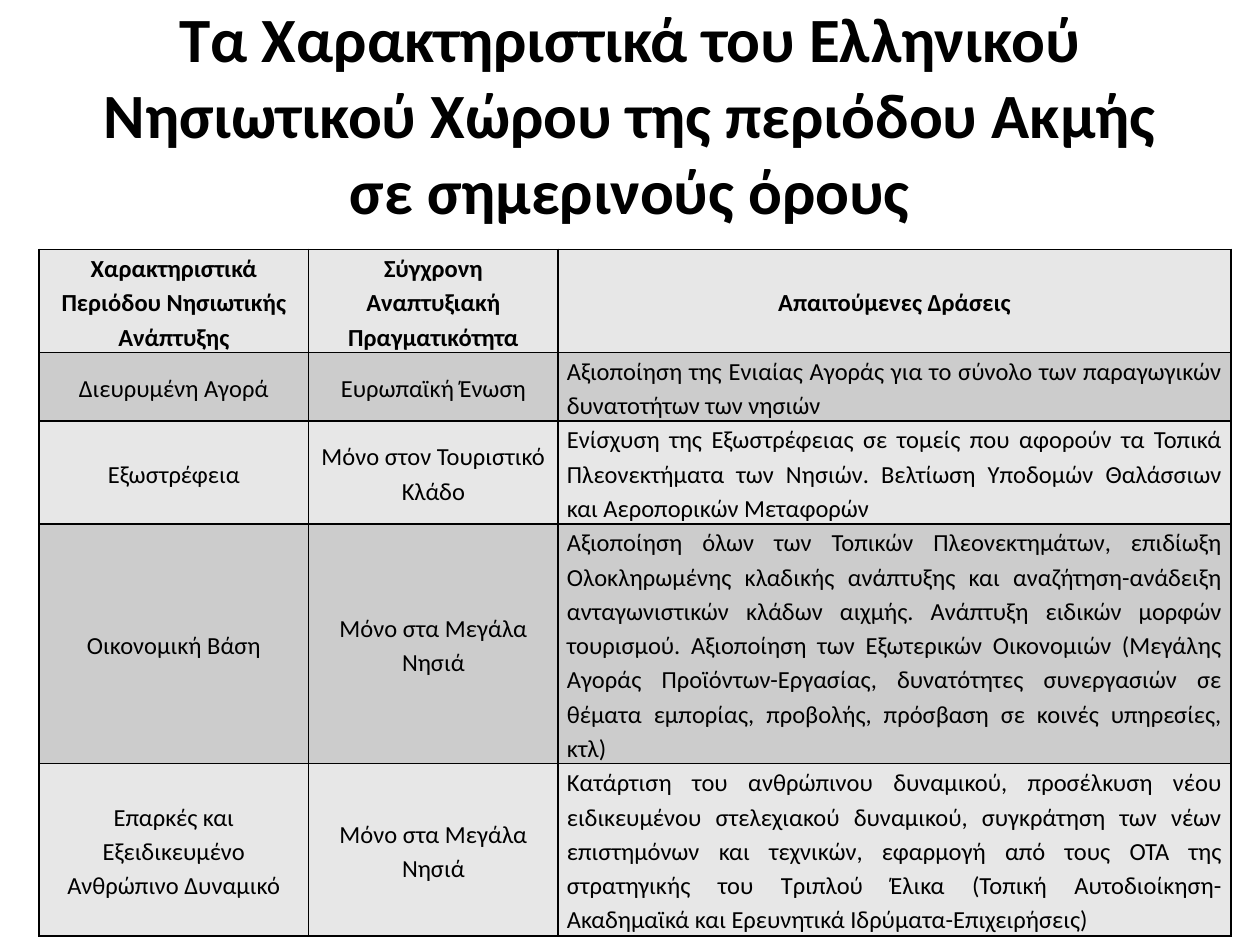
from dataclasses import dataclass

from lxml.etree import SubElement
from pptx import Presentation
from pptx.dml.color import RGBColor
from pptx.enum.text import MSO_ANCHOR as Anchor, PP_ALIGN as Align
from pptx.oxml.ns import qn
from pptx.util import Inches, Pt


@dataclass(frozen=True)
class Theme:
    font: str = "Calibri"
    ink: str = "000000"
    bands: tuple = ("E7E7E7", "CCCCCC")
    title_size: int = 36
    body_size: int = 14
    border_width: int = 1
    cell_spacing: float = 1.15


TITLE = "Τα Χαρακτηριστικά του Ελληνικού Νησιωτικού Χώρου της περιόδου Ακμής σε σημερινούς όρους"
COLUMN_WIDTHS = (2.14, 1.98, 5.34)
ROW_HEIGHTS = (0.82, 0.54, 0.82, 1.9, 1.37)
ROWS = (
    ("Χαρακτηριστικά Περιόδου Νησιωτικής Ανάπτυξης",
     "Σύγχρονη Αναπτυξιακή Πραγματικότητα",
     "Απαιτούμενες Δράσεις"),
    ("Διευρυμένη Αγορά",
     "Ευρωπαϊκή Ένωση",
     "Αξιοποίηση της Ενιαίας Αγοράς για το σύνολο των παραγωγικών δυνατοτήτων των νησιών"),
    ("Εξωστρέφεια",
     "Μόνο στον Τουριστικό Κλάδο",
     "Ενίσχυση της Εξωστρέφειας σε τομείς που αφορούν τα Τοπικά Πλεονεκτήματα των Νησιών. "
     "Βελτίωση Υποδομών Θαλάσσιων και Αεροπορικών Μεταφορών"),
    ("Οικονομική Βάση",
     "Μόνο στα Μεγάλα Νησιά",
     "Αξιοποίηση όλων των Τοπικών Πλεονεκτημάτων, επιδίωξη Ολοκληρωμένης κλαδικής ανάπτυξης "
     "και αναζήτηση-ανάδειξη ανταγωνιστικών κλάδων αιχμής. Ανάπτυξη ειδικών μορφών τουρισμού. "
     "Αξιοποίηση των Εξωτερικών Οικονομιών (Μεγάλης Αγοράς Προϊόντων-Εργασίας, δυνατότητες "
     "συνεργασιών σε θέματα εμπορίας, προβολής, πρόσβαση σε κοινές υπηρεσίες, κτλ)"),
    ("Επαρκές και Εξειδικευμένο Ανθρώπινο Δυναμικό",
     "Μόνο στα Μεγάλα Νησιά",
     "Κατάρτιση του ανθρώπινου δυναμικού, προσέλκυση νέου ειδικευμένου στελεχιακού δυναμικού, "
     "συγκράτηση των νέων επιστημόνων και τεχνικών, εφαρμογή από τους ΟΤΑ της στρατηγικής του "
     "Τριπλού Έλικα (Τοπική Αυτοδιοίκηση-Ακαδημαϊκά και Ερευνητικά Ιδρύματα-Επιχειρήσεις)"),
)


def write_text(frame, text, *, theme, size, bold=False, align=Align.CENTER, spacing=None):
    para = frame.paragraphs[0]
    para.alignment = align
    para.line_spacing = spacing
    span = para.add_run()
    span.text = text
    span.font.name = theme.font
    span.font.size = Pt(size)
    span.font.bold = bold
    span.font.color.rgb = RGBColor.from_string(theme.ink)


class SlideBuilder:
    def __init__(self, page, theme):
        self.page = page
        self.theme = theme

    def title(self, text, left, top, width, height):
        box = self.page.shapes.add_textbox(
            Inches(left), Inches(top), Inches(width), Inches(height))
        frame = box.text_frame
        frame.word_wrap = True
        frame.vertical_anchor = Anchor.MIDDLE
        write_text(frame, text, theme=self.theme, size=self.theme.title_size, bold=True)

    def table(self, rows, left, top, widths, heights):
        table = self.page.shapes.add_table(
            len(rows), len(widths), Inches(left), Inches(top),
            Inches(sum(widths)), Inches(sum(heights))).table
        for column, width in zip(table.columns, widths):
            column.width = Inches(width)
        for row, height in zip(table.rows, heights):
            row.height = Inches(height)
        for r, texts in enumerate(rows):
            for c, text in enumerate(texts):
                justified = r > 0 and c == len(widths) - 1
                self.cell(table.cell(r, c), text, fill=self.theme.bands[r % 2],
                          bold=r == 0, align=Align.JUSTIFY if justified else Align.CENTER)

    def cell(self, cell, text, *, fill, bold, align):
        cell.vertical_anchor = Anchor.MIDDLE
        cell.margin_left = cell.margin_right = Inches(0.07)
        cell.margin_top = cell.margin_bottom = 0
        self.border(cell)
        cell.fill.solid()
        cell.fill.fore_color.rgb = RGBColor.from_string(fill)
        write_text(cell.text_frame, text, theme=self.theme, size=self.theme.body_size,
                   bold=bold, align=align, spacing=self.theme.cell_spacing)

    def border(self, cell):
        """Draw all four edges; must run before the fill, which follows them in the XML."""
        properties = cell._tc.get_or_add_tcPr()
        for edge in ("lnL", "lnR", "lnT", "lnB"):
            line = SubElement(properties, qn(f"a:{edge}"), w=str(Pt(self.theme.border_width)))
            SubElement(SubElement(line, qn("a:solidFill")), qn("a:srgbClr"), val=self.theme.ink)


def main():
    deck = Presentation()
    deck.slide_width, deck.slide_height = Inches(10), Inches(7.5)
    page = deck.slides.add_slide(deck.slide_layouts[6])
    builder = SlideBuilder(page, Theme())
    builder.title(TITLE, 0.5, 0, 9, 1.8)
    builder.table(ROWS, 0.31, 1.98, COLUMN_WIDTHS, ROW_HEIGHTS)
    deck.save("out.pptx")


if __name__ == "__main__":
    main()
